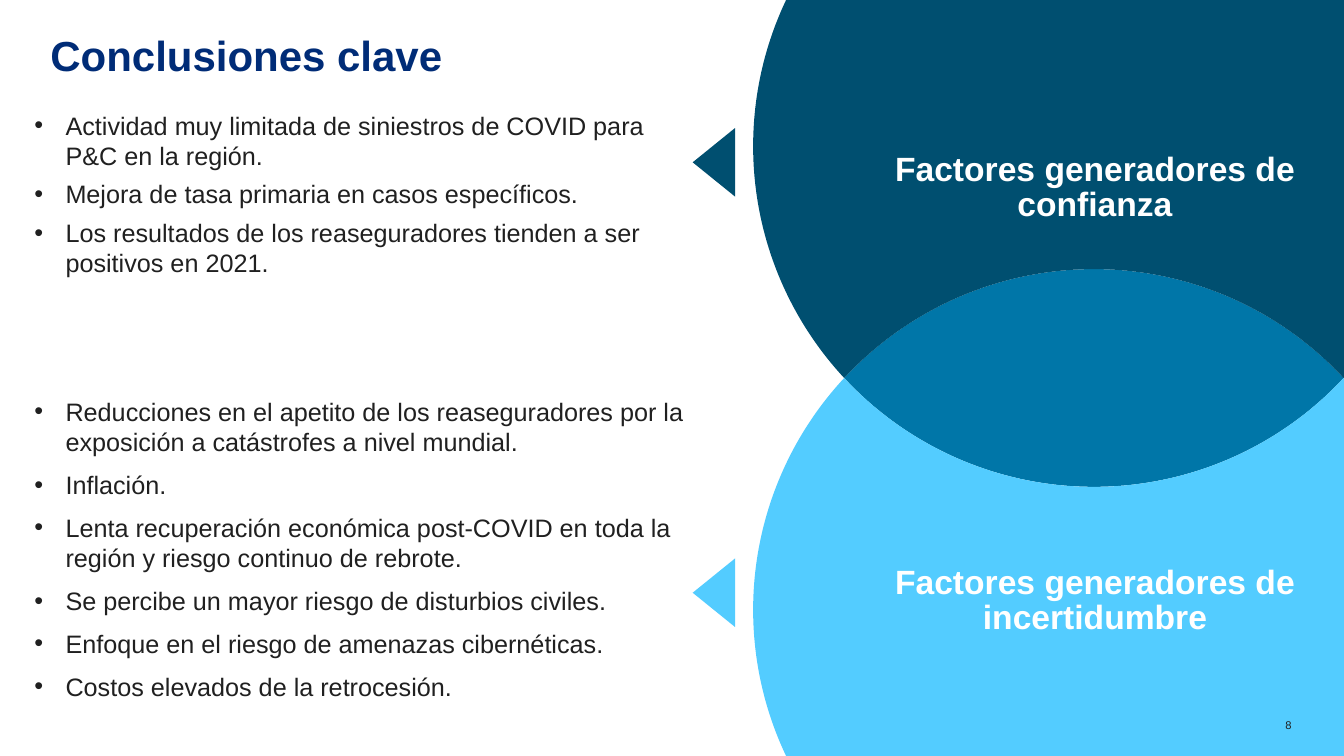
from math import asin, cos, pi, sin, tan

from lxml import etree
from pptx import Presentation
from pptx.dml.color import RGBColor
from pptx.enum.shapes import MSO_SHAPE
from pptx.enum.text import MSO_ANCHOR, PP_ALIGN
from pptx.oxml.ns import qn
from pptx.util import Inches, Pt

WIDTH, HEIGHT = 13.33, 7.5
COLORS = {"title": "002C77", "text": "202020", "white": "FFFFFF",
          "confidence": "004F70", "uncertainty": "53CCFF", "overlap": "0076A8"}

TITLE = "Conclusiones clave"
PAGE = "8"
FACTORS = [
    {"color": "confidence", "label": "Factores generadores de confianza",
     "label_top": 1.35, "arrow_top": 1.4, "box": (0.34, 1.09, 6.61, 1.68),
     "before": 0, "after": 6,
     "items": ["Actividad muy limitada de siniestros de COVID para P&C en la región.",
               "Mejora de tasa primaria en casos específicos.",
               "Los resultados de los reaseguradores tienden a ser positivos en 2021."]},
    {"color": "uncertainty", "label": "Factores generadores de incertidumbre",
     "label_top": 5.45, "arrow_top": 5.67, "box": (0.34, 3.93, 6.72, 3.07),
     "before": 9, "after": 0,
     "items": ["Reducciones en el apetito de los reaseguradores por la exposición "
               "a catástrofes a nivel mundial.",
               "Inflación.",
               "Lenta recuperación económica post-COVID en toda la región y riesgo "
               "continuo de rebrote.",
               "Se percibe un mayor riesgo de disturbios civiles.",
               "Enfoque en el riesgo de amenazas cibernéticas.",
               "Costos elevados de la retrocesión."]},
]

# Upper circle; the lower one is its mirror about the middle of the slide
CENTER_X, CENTER_Y, RADIUS = 10.85, 1.45, 3.38


def rgb(name):
    return RGBColor.from_string(COLORS[name])


def paint(sp, color):
    sp.shadow.inherit = False
    sp.fill.solid()
    sp.fill.fore_color.rgb = rgb(color)
    sp.line.fill.background()


def arc(*angles):
    """Bezier points along the upper circle, one curve between two angles."""
    points = []
    for start, end in zip(angles, angles[1:]):
        k = 4 / 3 * tan((end - start) / 4)
        unit = [(cos(start), sin(start)),
                (cos(start) - k * sin(start), sin(start) + k * cos(start)),
                (cos(end) + k * sin(end), sin(end) - k * cos(end)),
                (cos(end), sin(end))]
        curve = [(CENTER_X + RADIUS * x, CENTER_Y + RADIUS * y) for x, y in unit]
        points += curve[1:] if points else curve
    return points


def mirror(points):
    return [(x, HEIGHT - y) for x, y in points]


def add_region(slide, curve, corners, color):
    """Outline of Bezier points followed by straight corners."""
    emu = [(Inches(x), Inches(y)) for x, y in curve + corners]
    builder = slide.shapes.build_freeform(*emu[0], scale=1.0)
    builder.add_line_segments(emu[1:], close=True)
    sp = builder.convert_to_shape()
    steps = list(sp._element.iter(qn("a:lnTo")))[:len(curve) - 1]
    for i in range(0, len(steps), 3):
        bezier = etree.Element(qn("a:cubicBezTo"))
        steps[i].addprevious(bezier)
        for step in steps[i:i + 3]:
            bezier.append(step[0])
            step.getparent().remove(step)
    paint(sp, color)


def add_bullet(p):
    pPr = p._p.get_or_add_pPr()
    pPr.set("marL", str(Inches(0.31)))
    pPr.set("indent", str(-Inches(0.31)))
    etree.SubElement(pPr, qn("a:buFont")).set("typeface", "Arial")
    etree.SubElement(pPr, qn("a:buChar")).set("char", "•")


def add_text(slide, box, lines, size, color, bold=False, align=PP_ALIGN.LEFT,
             anchor=MSO_ANCHOR.TOP, spacing=None, bullets=False, before=0, after=0):
    tf = slide.shapes.add_textbox(*map(Inches, box)).text_frame
    tf.word_wrap = True
    tf.vertical_anchor = anchor
    tf.margin_left = tf.margin_right = tf.margin_top = tf.margin_bottom = 0
    for i, line in enumerate(lines):
        p = tf.paragraphs[0] if i == 0 else tf.add_paragraph()
        p.text = line
        p.alignment = align
        if spacing:
            p.line_spacing = spacing
        p.space_before = Pt(before if i else 0)
        p.space_after = Pt(after)
        if bullets:
            add_bullet(p)
        font = p.runs[0].font
        font.name, font.size, font.bold = "Arial", Pt(size), bold
        font.color.rgb = rgb(color)


def main():
    prs = Presentation()
    prs.slide_width, prs.slide_height = Inches(WIDTH), Inches(HEIGHT)
    slide = prs.slides.add_slide(prs.slide_layouts[6])

    add_text(slide, (0.5, 0.39, 12.31, 0.54), [TITLE], 30, "title", bold=True,
             spacing=0.8)

    crossing = asin((HEIGHT / 2 - CENTER_Y) / RADIUS)
    slide_edge = pi + asin(CENTER_Y / RADIUS)
    lower_arc = arc(pi - crossing, pi / 2, crossing)
    outer_arc = arc(slide_edge, pi, pi - crossing)
    upper_curve = outer_arc + mirror(lower_arc)[1:]
    corners = [(WIDTH, HEIGHT / 2), (WIDTH, 0)]
    add_region(slide, lower_arc + mirror(lower_arc)[-2::-1], [], "overlap")
    add_region(slide, upper_curve, corners, "confidence")
    add_region(slide, mirror(upper_curve), mirror(corners), "uncertainty")

    for factor in FACTORS:
        add_text(slide, (8.8, factor["label_top"], 4.12, 1.04), [factor["label"]],
                 24, "white", bold=True, align=PP_ALIGN.CENTER,
                 anchor=MSO_ANCHOR.MIDDLE, spacing=0.86)
        add_text(slide, factor["box"], factor["items"], 18, "text", bullets=True,
                 before=factor["before"], after=factor["after"])
        arrow = slide.shapes.add_shape(
            MSO_SHAPE.ISOSCELES_TRIANGLE, Inches(6.74), Inches(factor["arrow_top"]),
            Inches(0.68), Inches(0.42))
        arrow.rotation = 270
        paint(arrow, factor["color"])

    add_text(slide, (12.5, 7.13, 0.31, 0.13), [PAGE], 8, "text", align=PP_ALIGN.RIGHT)
    prs.save("out.pptx")


if __name__ == "__main__":
    main()
